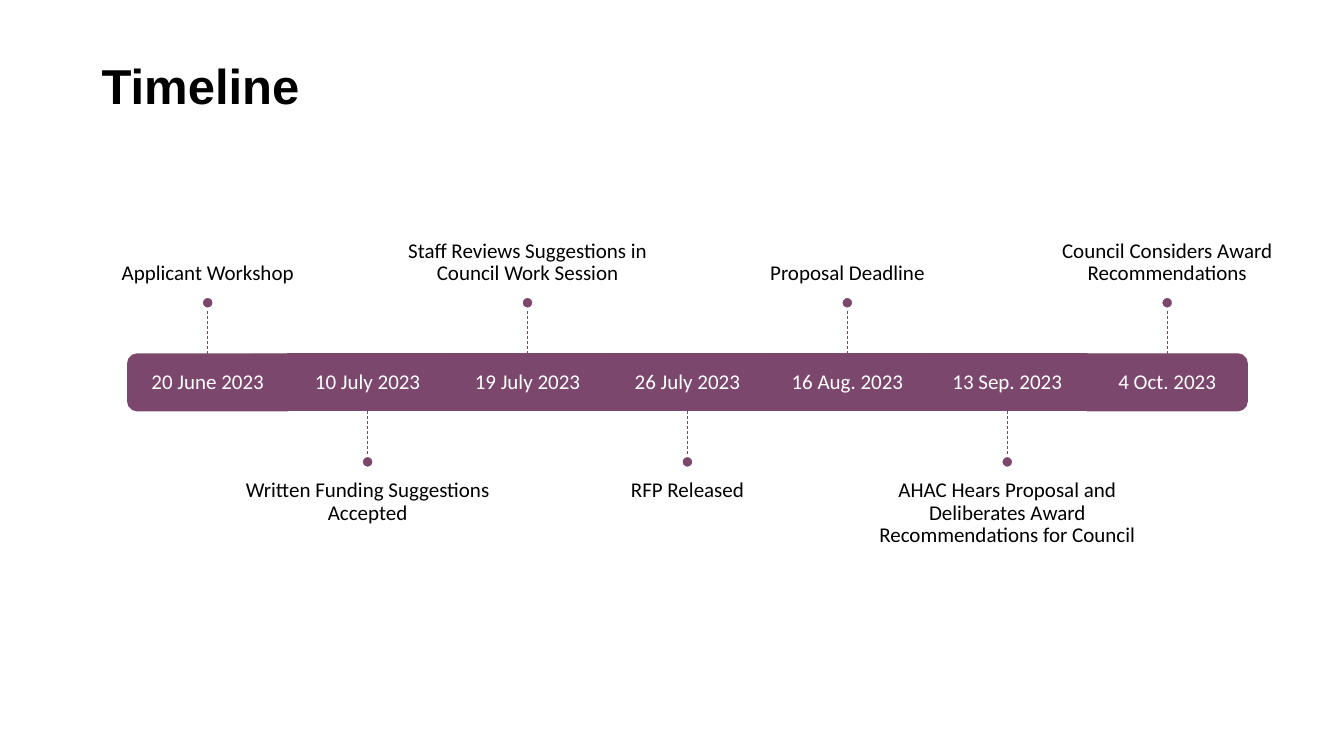
"""Build a timeline slide with seven dated steps along one bar."""
from pptx import Presentation
from pptx.dml.color import RGBColor
from pptx.enum.dml import MSO_LINE
from pptx.enum.shapes import MSO_CONNECTOR, MSO_SHAPE as Kind
from pptx.enum.text import MSO_ANCHOR as Anchor, PP_ALIGN as Align
from pptx.oxml.ns import qn
from pptx.util import Cm, Pt
from lxml.etree import SubElement

TITLE = "Timeline"
STEPS = [
    ("20 June 2023", "Applicant Workshop"),
    ("10 July 2023", "Written Funding Suggestions Accepted"),
    ("19 July 2023", "Staff Reviews Suggestions in Council Work Session"),
    ("26 July 2023", "RFP Released"),
    ("16 Aug. 2023", "Proposal Deadline"),
    ("13 Sep. 2023", "AHAC Hears Proposal and Deliberates Award Recommendations for Council"),
    ("4 Oct. 2023", "Council Considers Award Recommendations"),
]
PLUM = RGBColor(0x7B, 0x47, 0x6C)
WHITE = RGBColor(0xFF, 0xFF, 0xFF)
BLACK = RGBColor(0, 0, 0)

LEFT, TOP = Cm(3.22), Cm(8.92)
STEP, HIGH = Cm(4.03), Cm(1.43)
NOTE_W, NOTE_H = Cm(6.71), Cm(5.03)
STEM, DOT, PAD = Cm(1.15), Cm(0.28), Cm(0.3)

LABEL = {"name": "Calibri", "size": Pt(15)}
HEAD = {"name": "Arial", "size": Pt(35), "bold": True}


def write(shape, text, form, color, anchor, align, pads):
    frame = shape.text_frame
    frame.word_wrap = True
    frame.vertical_anchor = anchor
    for side, pad in zip(("left", "top", "right", "bottom"), pads):
        setattr(frame, "margin_" + side, pad)
    para = frame.paragraphs[0]
    para.alignment = align
    para.line_spacing = 0.9
    run = para.add_run()
    run.text = text
    for key, value in form.items():
        setattr(run.font, key, value)
    run.font.color.rgb = color


def draw(shapes, kind, box, edge):
    shape = shapes.add_shape(kind, *box)
    shape.shadow.inherit = False
    shape.fill.solid()
    shape.fill.fore_color.rgb = PLUM
    shape.line.color.rgb = edge
    shape.line.width = Pt(1)
    return shape


def add_block(shapes, index, left):
    box = (left, TOP, STEP, HIGH)
    if 0 < index < len(STEPS) - 1:
        block = host = draw(shapes, Kind.RECTANGLE, box, PLUM)
    else:
        tall = (left + (STEP - HIGH) // 2, TOP + (HIGH - STEP) // 2, HIGH, STEP)
        cap = draw(shapes, Kind.ROUND_2_SAME_RECTANGLE, tall, PLUM)
        cap.rotation = 90 if index else 270
        block, host = None, shapes.add_textbox(*box)
    write(host, STEPS[index][0], LABEL, WHITE, Anchor.MIDDLE, Align.CENTER, [PAD] * 4)
    return block


def add_stem(shapes, mid, start, end, block, site):
    stem = shapes.add_connector(MSO_CONNECTOR.STRAIGHT, mid, start, mid, end)
    if block is not None:
        stem.begin_connect(block, site)
    stem.line.color.rgb = PLUM
    stem.line.width = Pt(0.5)
    stem.line.dash_style = MSO_LINE.DASH
    SubElement(stem._element.spPr, qn("a:effectLst"))


def add_step(shapes, index):
    left = LEFT + index * STEP
    mid = left + STEP // 2
    block = add_block(shapes, index, left)
    if index % 2:
        start, end, site = TOP + HIGH, TOP + HIGH + STEM, 2
        dot_y, note_y = end, end + DOT
        anchor, pads = Anchor.TOP, (0, PAD, 0, 0)
    else:
        start, end, site = TOP, TOP - STEM, 0
        dot_y, note_y = end - DOT, end - DOT - NOTE_H
        anchor, pads = Anchor.BOTTOM, (0, 0, 0, PAD)
    note = shapes.add_textbox(mid - NOTE_W // 2, note_y, NOTE_W, NOTE_H)
    write(note, STEPS[index][1], LABEL, BLACK, anchor, Align.CENTER, pads)
    add_stem(shapes, mid, start, end, block, site)
    draw(shapes, Kind.OVAL, (mid - DOT // 2, dot_y, DOT, DOT), WHITE)


def main():
    deck = Presentation()
    deck.slide_width, deck.slide_height = Cm(33.87), Cm(19.05)
    shapes = deck.slides.add_slide(deck.slide_layouts[6]).shapes
    title = shapes.add_textbox(Cm(2.31), Cm(1.37), Cm(29.21), Cm(1.65))
    pads = (Cm(0.25), Cm(0.13), Cm(0.25), Cm(0.13))
    write(title, TITLE, HEAD, BLACK, Anchor.BOTTOM, Align.LEFT, pads)
    for index in range(len(STEPS)):
        add_step(shapes, index)
    deck.save("out.pptx")


if __name__ == "__main__":
    main()
